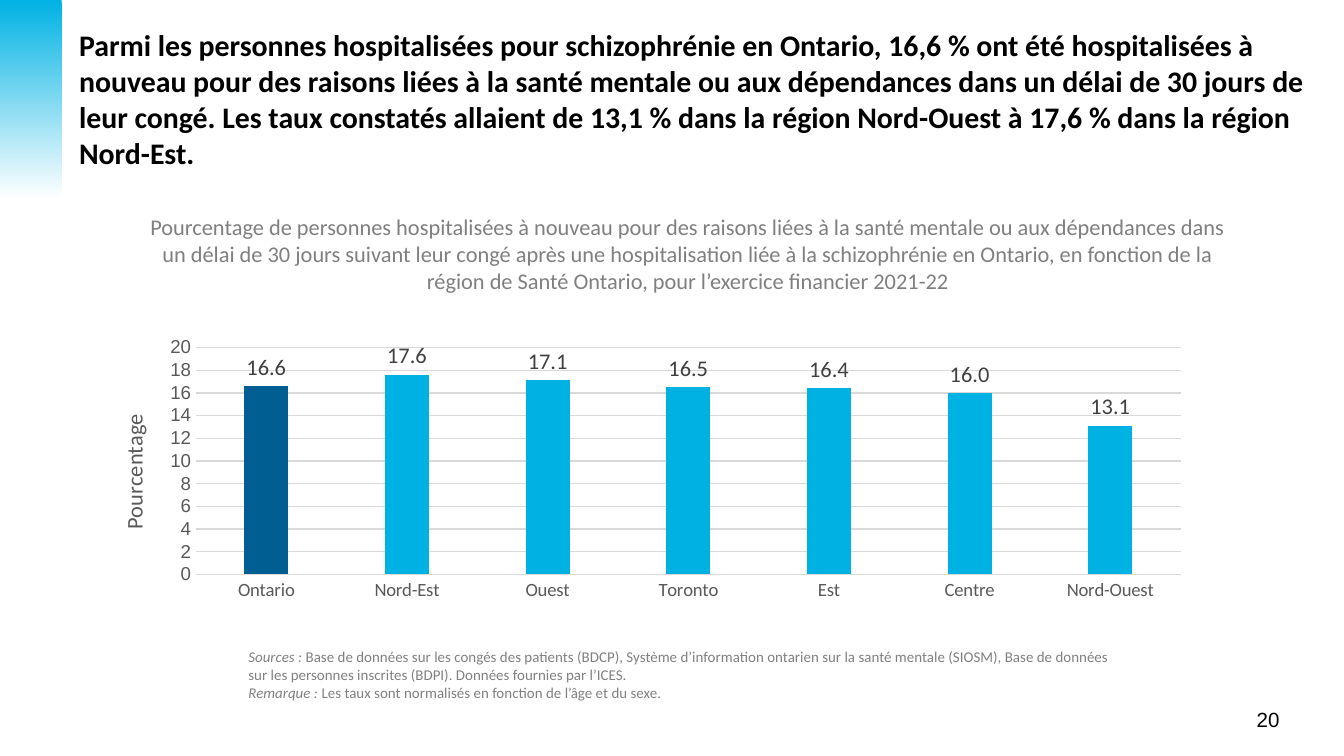
from dataclasses import dataclass

from lxml.etree import SubElement
from pptx import Presentation
from pptx.chart.data import CategoryChartData
from pptx.dml.color import RGBColor
from pptx.enum.chart import XL_CHART_TYPE, XL_LABEL_POSITION, XL_TICK_MARK
from pptx.enum.shapes import MSO_SHAPE
from pptx.enum.text import MSO_ANCHOR, PP_ALIGN
from pptx.oxml.ns import qn
from pptx.util import Pt

BLACK = RGBColor(0x00, 0x00, 0x00)
WHITE = RGBColor(0xFF, 0xFF, 0xFF)
SKY = RGBColor(0x00, 0xB2, 0xE3)
NAVY = RGBColor(0x00, 0x5E, 0x92)
GRID = RGBColor(0xD9, 0xD9, 0xD9)
AXIS_GREY = RGBColor(0x59, 0x59, 0x59)
LABEL_GREY = RGBColor(0x40, 0x40, 0x40)
SUBTITLE_GREY = RGBColor(0x7F, 0x7F, 0x7F)
SOURCE_GREY = RGBColor(0x80, 0x80, 0x80)

RATES = {
    "Ontario": 16.6,
    "Nord-Est": 17.6,
    "Ouest": 17.1,
    "Toronto": 16.5,
    "Est": 16.4,
    "Centre": 16.0,
    "Nord-Ouest": 13.1,
}


@dataclass(frozen=True)
class Frame:
    left: float
    top: float
    width: float
    height: float

    def lengths(self) -> tuple:
        return Pt(self.left), Pt(self.top), Pt(self.width), Pt(self.height)


@dataclass(frozen=True)
class Span:
    text: str
    italic: bool = False


@dataclass(frozen=True)
class TextBlock:
    frame: Frame
    paragraphs: tuple
    size: float
    color: RGBColor
    font: str = "Calibri"
    bold: bool = False
    align: PP_ALIGN = PP_ALIGN.LEFT
    anchor: MSO_ANCHOR = MSO_ANCHOR.TOP


TEXT_BLOCKS = (
    TextBlock(
        Frame(608.4, 375.1, 84.2, 20.9), ((Span("20"),),), 11, BLACK,
        font="Arial", align=PP_ALIGN.RIGHT, anchor=MSO_ANCHOR.MIDDLE,
    ),
    TextBlock(
        Frame(35.3, 10.8, 673.2, 74.2),
        ((Span(
            "Parmi les personnes hospitalisées pour schizophrénie en Ontario, 16,6 % ont été "
            "hospitalisées à nouveau pour des raisons liées à la santé mentale ou aux "
            "dépendances dans un délai de 30 jours de leur congé. Les taux constatés allaient "
            "de 13,1 % dans la région Nord-Ouest à 17,6 % dans la région Nord-Est."
        ),),),
        16, BLACK, bold=True,
    ),
    TextBlock(
        Frame(126, 343.4, 486.7, 36),
        (
            (
                Span("Sources : ", italic=True),
                Span(
                    "Base de données sur les congés des patients (BDCP), Système d’information "
                    "ontarien sur la santé mentale (SIOSM), Base de données sur les personnes "
                    "inscrites (BDPI). Données fournies par l’ICES."
                ),
            ),
            (
                Span("Remarque : ", italic=True),
                Span("Les taux sont normalisés en fonction de l’âge et du sexe."),
            ),
        ),
        8, SOURCE_GREY,
    ),
    TextBlock(
        Frame(72.7, 110.9, 591.8, 51.1),
        ((Span(
            "Pourcentage de personnes hospitalisées à nouveau pour des raisons liées à la santé "
            "mentale ou aux dépendances dans un délai de 30 jours suivant leur congé après une "
            "hospitalisation liée à la schizophrénie en Ontario, en fonction de la région de "
            "Santé Ontario, pour l’exercice financier 2021-22"
        ),),),
        12, SUBTITLE_GREY, align=PP_ALIGN.CENTER,
    ),
)


def style_font(font, name: str, size: float, color: RGBColor, bold: bool = False) -> None:
    font.name = name
    font.size = Pt(size)
    font.bold = bold
    font.color.rgb = color


def add_text(page, block: TextBlock) -> None:
    frame = page.shapes.add_textbox(*block.frame.lengths()).text_frame
    frame.word_wrap = True
    frame.vertical_anchor = block.anchor
    for index, spans in enumerate(block.paragraphs):
        para = frame.add_paragraph() if index else frame.paragraphs[0]
        para.alignment = block.align
        for span in spans:
            run = para.add_run()
            run.text = span.text
            style_font(run.font, block.font, block.size, block.color, block.bold)
            run.font.italic = span.italic


def add_gradient_band(page, frame: Frame) -> None:
    band = page.shapes.add_shape(MSO_SHAPE.RECTANGLE, *frame.lengths())
    band.shadow.inherit = False
    band.line.fill.background()
    band.fill.gradient()
    band.fill.gradient_angle = 270
    for stop, color in zip(band.fill.gradient_stops, (SKY, WHITE)):
        stop.color.rgb = color


def set_layout(parent, position: int, **values) -> None:
    layout = parent.find(qn("c:layout"))
    if layout is None:
        layout = SubElement(parent, qn("c:layout"))
        parent.insert(position, layout)
    manual = SubElement(layout, qn("c:manualLayout"))
    for tag, value in values.items():
        SubElement(manual, qn(f"c:{tag}")).set("val", str(value))


def add_rate_chart(page, frame: Frame) -> None:
    data = CategoryChartData(number_format="0.0")
    data.categories = list(RATES)
    data.add_series("Series 1", list(RATES.values()))
    chart = page.shapes.add_chart(
        XL_CHART_TYPE.COLUMN_CLUSTERED, *frame.lengths(), data
    ).chart
    chart.has_legend = False
    chart.has_title = False
    style_font(chart.font, "Arial", 10, BLACK)

    plot = chart.plots[0]
    plot.vary_by_categories = False
    plot.gap_width = 219
    plot.overlap = -27
    series = plot.series[0]
    for format_, color in ((series.format, SKY), (series.points[0].format, NAVY)):
        format_.fill.solid()
        format_.fill.fore_color.rgb = color
    labels = series.data_labels
    labels.show_value = True
    labels.number_format = "0.0"
    labels.number_format_is_linked = False
    labels.position = XL_LABEL_POSITION.OUTSIDE_END
    style_font(labels.font, "Calibri", 12, LABEL_GREY)

    regions, rates = chart.category_axis, chart.value_axis
    for axis, font_name in ((regions, "Calibri"), (rates, "Arial")):
        axis.major_tick_mark = axis.minor_tick_mark = XL_TICK_MARK.NONE
        style_font(axis.tick_labels.font, font_name, 10, AXIS_GREY)
    rates.minimum_scale, rates.maximum_scale, rates.major_unit = 0, 20, 2
    rates.tick_labels.number_format = "0"
    rates.tick_labels.number_format_is_linked = False
    rates.format.line.fill.background()
    for line in (regions.format.line, rates.major_gridlines.format.line):
        line.color.rgb = GRID
        line.width = Pt(0.75)

    text_frame = rates.axis_title.text_frame
    run = text_frame.paragraphs[0].add_run()
    run.text = "Pourcentage"
    style_font(run.font, "Calibri", 12, AXIS_GREY)
    text_frame._txBody.find(qn("a:bodyPr")).set("rot", "-5400000")
    set_layout(rates.axis_title._element, 1, xMode="edge", yMode="edge", x=0.01, y=0.41)
    set_layout(chart._chartSpace.chart.plotArea, 0, layoutTarget="inner",
               xMode="edge", yMode="edge", x=0.08, y=0.25, w=0.85, h=0.58)


def main() -> None:
    deck = Presentation()
    deck.slide_width, deck.slide_height = Pt(720), Pt(405)
    page = deck.slides.add_slide(deck.slide_layouts[6])
    add_gradient_band(page, Frame(0, 0, 33.1, 106.6))
    add_rate_chart(page, Frame(55.4, 133.9, 620.6, 209.5))
    for block in TEXT_BLOCKS:
        add_text(page, block)
    deck.save("out.pptx")


if __name__ == "__main__":
    main()
